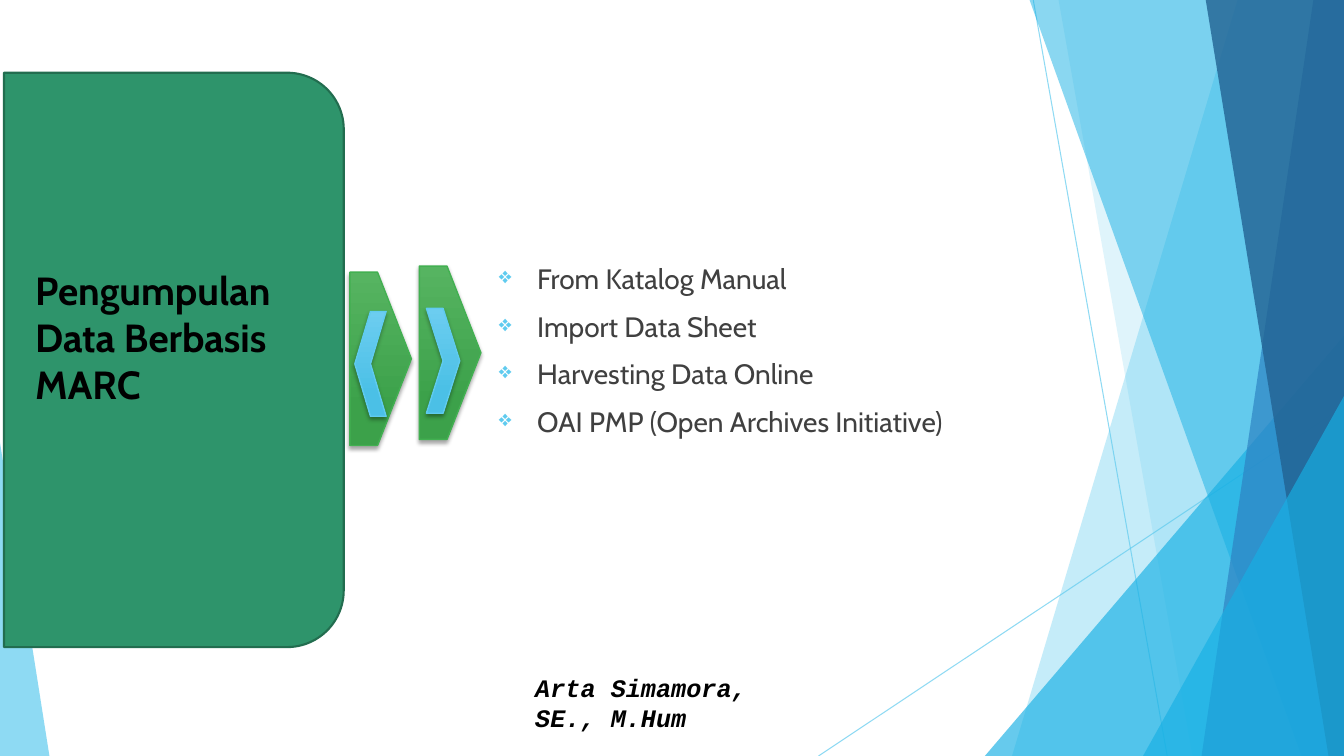
"""Build the slide on collecting MARC-based data."""
from lxml.etree import SubElement
from pptx import Presentation
from pptx.dml.color import RGBColor
from pptx.enum.shapes import MSO_CONNECTOR, MSO_SHAPE
from pptx.enum.text import MSO_ANCHOR, MSO_AUTO_SIZE, PP_ALIGN
from pptx.oxml.ns import qn
from pptx.util import Inches, Pt

SKY = RGBColor(0x5F, 0xCB, 0xEF)
CYAN = RGBColor(0x17, 0xB0, 0xE4)
BLUE = RGBColor(0x2E, 0x83, 0xC3)
NAVY = RGBColor(0x22, 0x62, 0x92)
GREEN = RGBColor(0x2E, 0x94, 0x6B)
PINE = RGBColor(0x22, 0x6D, 0x4F)
LEAF = RGBColor(0x42, 0xB0, 0x51)
LEAVES = RGBColor(0x56, 0xB4, 0x61), RGBColor(0x3C, 0xA1, 0x4A)
SKIES = RGBColor(0x6C, 0xCD, 0xF0), RGBColor(0x4B, 0xC0, 0xE6)
GREY = RGBColor(0x40, 0x40, 0x40)
BLACK = RGBColor(0, 0, 0)

TITLE = ["Pengumpulan Data Berbasis MARC"]
ITEMS = ["From Katalog Manual", "Import Data Sheet", "Harvesting Data Online",
         "OAI PMP (Open Archives Initiative)"]
AUTHOR = ["Arta Simamora, SE., M.Hum"]

LINES = [(76.88, 0, 86.85, 100), (100, 53.73, 60.9, 100)]
DECOR = [
    ("beam", (92.1, 75.3), SKY, 36),
    ("beam", (78.75, 88.73), SKY, 20),
    ("wedge", (73.28, 44.4, 26.72, 55.6, 1), CYAN, 66),
    ("beam", (76.58, 96.83), CYAN, 50),
    ("beam", (97.73, 89.4), BLUE, 70),
    ("beam", (89.7, 98.85), NAVY, 80),
    ("wedge", (85.05, 52.4, 14.95, 47.6, 1), CYAN, 66),
    ("wedge", (0, 58.53, 3.68, 41.47, 0), SKY, 70),
]
ARROWS = [
    ((31.2, 35.2, 4.58, 22.93), (31.73, 40.8, 2.48, 13.87), False),
    ((26.03, 36, 4.58, 22.93), (26.4, 41.2, 2.33, 13.87), True),
]
PANEL = (-8.44, 25.15, 42.75, 44.93)

deck = Presentation()
deck.slide_width, deck.slide_height = Inches(13.33), Inches(7.5)
slide = deck.slides.add_slide(deck.slide_layouts[6])
shapes = slide.shapes


def scale(*nums):
    sides = deck.slide_width, deck.slide_height
    return [int(num * sides[i % 2] / 100) for i, num in enumerate(nums)]


def fade(shape, share):
    tint = shape._element.spPr.find(".//" + qn("a:srgbClr"))
    SubElement(tint, qn("a:alpha"), val=str(share * 1000))


def paint(shape, color):
    shape.shadow.inherit = False
    shape.fill.solid()
    shape.fill.fore_color.rgb = color
    shape.line.fill.background()


def add_line(ends):
    line = shapes.add_connector(MSO_CONNECTOR.STRAIGHT, *scale(*ends))
    line.line.color.rgb = SKY
    line.line.width = Pt(0.75)
    fade(line, 70)
    SubElement(line._element.spPr, qn("a:effectLst"))


def add_beam(top, base):
    pen = shapes.build_freeform(*scale(top, -0.13))
    pen.add_line_segments([scale(*dot) for dot in
                           [(100, -0.13), (100, 100), (base, 100)]])
    return pen.convert_to_shape()


def add_wedge(*place):
    wedge = shapes.add_shape(MSO_SHAPE.ISOSCELES_TRIANGLE, *scale(*place[:4]))
    wedge.adjustments[0] = place[4]
    return wedge


def add_glossy(kind, place, tints, edge):
    shape = shapes.add_shape(kind, *scale(*place))
    shape.fill.gradient()
    shape.fill.gradient_angle = 270
    for stop, tint, spot in zip(shape.fill.gradient_stops, tints, (0, 0.78)):
        stop.color.rgb = tint
        stop.position = spot
    shape.line.color.rgb = edge
    shape.line.width = Pt(1)
    shape.shadow.inherit = False
    glow = SubElement(shape._element.spPr.find(qn("a:effectLst")),
                      qn("a:outerShdw"), blurRad=str(Pt(3)),
                      dist=str(Pt(2)), dir="5400000", rotWithShape="0")
    tint = SubElement(glow, qn("a:srgbClr"), val=str(BLACK))
    SubElement(tint, qn("a:alpha"), val="35000")
    return shape


def add_bullet(para):
    props = para._p.get_or_add_pPr()
    props.set("marL", str(Inches(0.38)))
    props.set("indent", str(Inches(-0.38)))
    tint = SubElement(props, qn("a:buClr"))
    SubElement(tint, qn("a:srgbClr"), val=str(SKY))
    SubElement(props, qn("a:buSzPct"), val="80000")
    SubElement(props, qn("a:buChar"), char="❖")


def add_text(rows, place, size, face="Cabin", color=BLACK, bold=False,
             slant=False, list_gap=None):
    box = shapes.add_textbox(*scale(*place))
    frame = box.text_frame
    frame.word_wrap = True
    if list_gap:
        frame.auto_size = MSO_AUTO_SIZE.NONE
        frame.vertical_anchor = MSO_ANCHOR.MIDDLE
    else:
        frame.auto_size = MSO_AUTO_SIZE.SHAPE_TO_FIT_TEXT
    for i, row in enumerate(rows):
        para = frame.add_paragraph() if i else frame.paragraphs[0]
        para.alignment = PP_ALIGN.LEFT
        if list_gap:
            add_bullet(para)
            para.space_before = Pt(list_gap if i else 0)
        run = para.add_run()
        run.text = row
        font = run.font
        font.name, font.size = face, Pt(size)
        font.bold, font.italic = bold, slant
        font.color.rgb = color


def main():
    for ends in LINES:
        add_line(ends)
    makers = {"beam": add_beam, "wedge": add_wedge}
    for kind, place, color, share in DECOR:
        shape = makers[kind](*place)
        paint(shape, color)
        fade(shape, share)

    add_text(ITEMS, (36.38, 32.67, 43.65, 27.2), 20, color=GREY, list_gap=10)
    for plate, mark, flip in ARROWS:
        body = add_glossy(MSO_SHAPE.PENTAGON, plate, LEAVES, LEAF)
        body.adjustments[0] = 0.55
        tip = add_glossy(MSO_SHAPE.CHEVRON, mark, SKIES, SKY)
        if flip:
            tip._element.spPr.find(qn("a:xfrm")).set("flipH", "1")

    add_text(AUTHOR, (39.08, 88.27, 22.73, 5.33), 18, face="Courier New",
             bold=True, slant=True)
    panel = shapes.add_shape(MSO_SHAPE.ROUND_2_SAME_RECTANGLE, *scale(*PANEL))
    panel.rotation = 90
    paint(panel, GREEN)
    panel.line.color.rgb = PINE
    panel.line.width = Pt(1.5)
    add_text(TITLE, (1.88, 34.6, 22.28, 20.13), 28, bold=True)
    deck.save("out.pptx")


if __name__ == "__main__":
    main()
